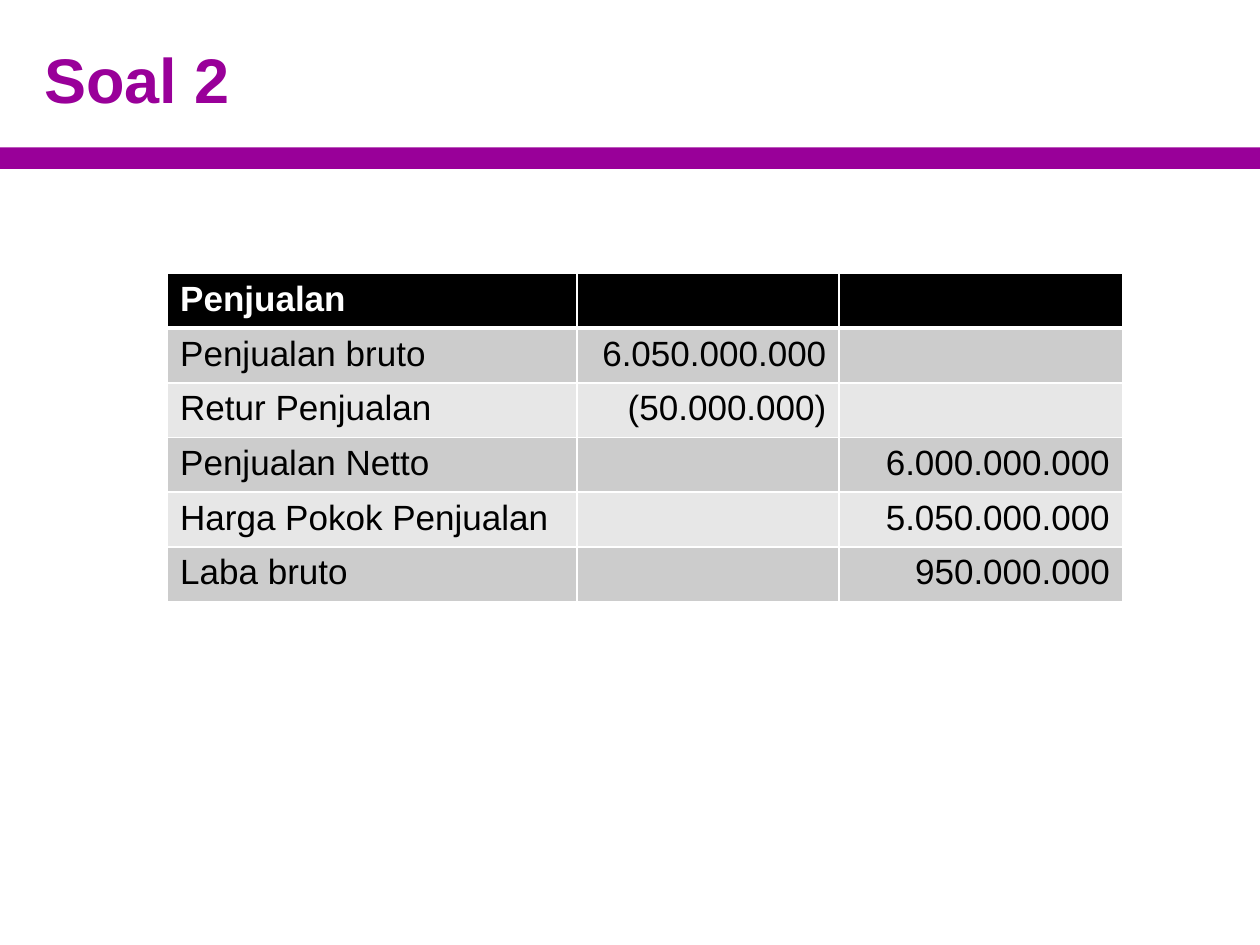
from lxml import etree
from pptx import Presentation
from pptx.dml.color import RGBColor
from pptx.enum.shapes import MSO_SHAPE
from pptx.enum.text import MSO_ANCHOR, PP_ALIGN
from pptx.oxml.ns import qn
from pptx.util import Inches, Pt

RECTANGLE = MSO_SHAPE.RECTANGLE
MIDDLE = MSO_ANCHOR.MIDDLE
LEFT, RIGHT = PP_ALIGN.LEFT, PP_ALIGN.RIGHT

THEME = {
    "font": "Arial",
    "accent": "990099",
    "header": "000000",
    "bands": ("CCCCCC", "E7E7E7"),
    "light": "FFFFFF",
    "dark": "000000",
    "title_size": 36,
    "table_size": 20,
}

ROWS = [
    ("Penjualan", "", ""),
    ("Penjualan bruto", "6.050.000.000", ""),
    ("Retur Penjualan", "(50.000.000)", ""),
    ("Penjualan Netto", "", "6.000.000.000"),
    ("Harga Pokok Penjualan", "", "5.050.000.000"),
    ("Laba bruto", "", "950.000.000"),
]
COLUMN_WIDTHS = (3.25, 2.08, 2.25)
ROW_HEIGHT = 0.41


def write(paragraph, text, size, color, bold):
    run = paragraph.add_run()
    run.text = text
    formats = {"name": THEME["font"], "size": Pt(size), "bold": bold}
    for name, value in formats.items():
        setattr(run.font, name, value)
    run.font.color.rgb = RGBColor.from_string(color)


def add_borders(cell, widths):
    """Draw cell borders; widths maps a side (L, R, T, B) to points."""
    properties = cell._tc.get_or_add_tcPr()
    for side, width in widths.items():
        line = etree.SubElement(properties, qn(f"a:ln{side}"), w=str(Pt(width)))
        fill = etree.SubElement(line, qn("a:solidFill"))
        etree.SubElement(fill, qn("a:srgbClr"), val=THEME["light"])


presentation = Presentation()
presentation.slide_width, presentation.slide_height = Inches(10), Inches(7.5)
slide_width = presentation.slide_width
slide = presentation.slides.add_slide(presentation.slide_layouts[6])

# Accent bar below the title
bar = slide.shapes.add_shape(RECTANGLE, 0, Inches(1.17), slide_width, Inches(0.17))
bar.shadow.inherit = False
bar.fill.solid()
bar.fill.fore_color.rgb = RGBColor.from_string(THEME["accent"])
bar.line.fill.background()

# Title
title = slide.shapes.add_textbox(0, 0, slide_width, presentation.slide_height // 6)
frame_formats = {"word_wrap": True, "vertical_anchor": MIDDLE, "margin_left": Inches(0.35)}
for name, value in frame_formats.items():
    setattr(title.text_frame, name, value)
write(title.text_frame.paragraphs[0], "Soal 2", THEME["title_size"], THEME["accent"], True)

# Gross profit table
table = slide.shapes.add_table(
    len(ROWS), len(COLUMN_WIDTHS), Inches(1.33), Inches(2.17),
    Inches(sum(COLUMN_WIDTHS)), Inches(ROW_HEIGHT * len(ROWS)),
).table
for column, width in zip(table.columns, COLUMN_WIDTHS):
    column.width = Inches(width)

for row_index, values in enumerate(ROWS):
    is_header = row_index == 0
    background = THEME["header"] if is_header else THEME["bands"][(row_index - 1) % 2]
    text_color = THEME["light"] if is_header else THEME["dark"]
    top_width = 3 if row_index == 1 else 1
    bottom_width = 3 if is_header else 1
    for column_index, value in enumerate(values):
        cell = table.cell(row_index, column_index)
        add_borders(cell, {"L": 1, "R": 1, "T": top_width, "B": bottom_width})
        cell.fill.solid()
        cell.fill.fore_color.rgb = RGBColor.from_string(background)
        if value:
            paragraph = cell.text_frame.paragraphs[0]
            paragraph.alignment = RIGHT if column_index else LEFT
            write(paragraph, value, THEME["table_size"], text_color, is_header)

presentation.save("out.pptx")
